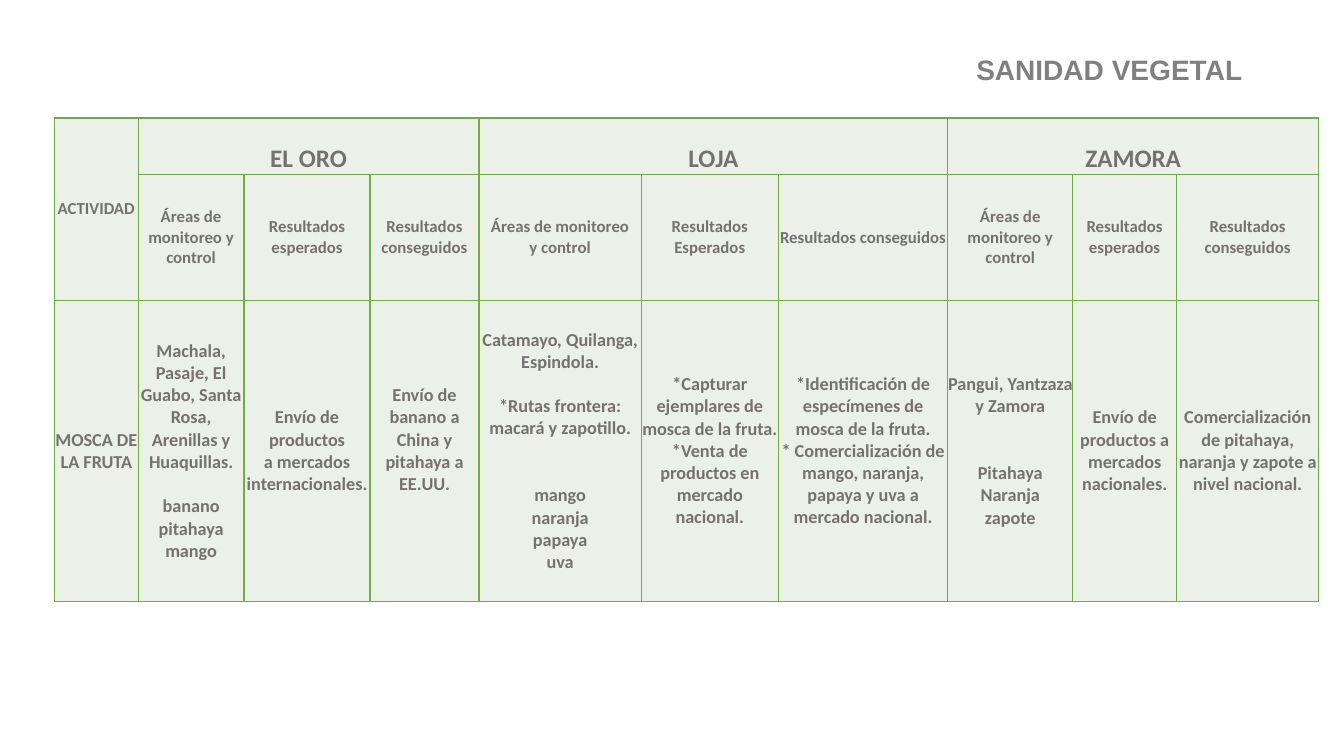
from lxml.etree import SubElement
from pptx import Presentation
from pptx.dml.color import RGBColor
from pptx.enum.text import MSO_ANCHOR, PP_ALIGN
from pptx.oxml.ns import qn
from pptx.util import Pt

PX = 9144  # 100 px to the inch
COLORS = {"title": "808080", "text": "767171", "cell": "EBF1E9", "border": "70AD47"}
LINE = 16  # height in points of one 13 pt line

COLS = [83, 105, 125, 108, 161, 136, 168, 124, 103, 141]
ROWS = [56, 125, 299]
PROVINCES = ["EL ORO", "LOJA", "ZAMORA"]
AREAS, EXPECTED, ACHIEVED = ("Áreas de monitoreo y control", "Resultados esperados",
                             "Resultados conseguidos")
HEADINGS = [AREAS, EXPECTED, ACHIEVED,
            "Áreas de monitoreo\ny control", "Resultados\nEsperados", ACHIEVED,
            AREAS, EXPECTED, ACHIEVED]
# An empty line stands for a gap of one line
FRUIT_FLY = [
    "MOSCA DE LA FRUTA",
    "Machala, Pasaje, El Guabo, Santa Rosa, Arenillas y Huaquillas.\n\n"
    "banano\npitahaya\nmango",
    "Envío de productos\na mercados\ninternacionales.",
    "Envío de banano a China y pitahaya a EE.UU.\n",
    "Catamayo, Quilanga, Espindola.\n\n*Rutas frontera: macará y zapotillo.\n\n\n"
    "mango\nnaranja\npapaya\nuva",
    "*Capturar ejemplares de mosca de la fruta.\n*Venta de productos en mercado nacional.",
    "*Identificación de especímenes de mosca de la fruta.\n"
    "* Comercialización de mango, naranja, papaya y uva a mercado nacional.",
    "Pangui, Yantzaza y Zamora\n\n\nPitahaya\nNaranja\nzapote",
    "Envío de productos a mercados nacionales.",
    "Comercialización de pitahaya, naranja y zapote a nivel nacional.",
]


def px(*values):
    return [v * PX for v in values]


def set_attrs(obj, values):
    for name, value in values.items():
        setattr(obj, name, value)


def add_run(p, text, size, font, color):
    r = p.add_run()
    r.text = text
    set_attrs(r.font, {"size": Pt(size), "name": font, "bold": True})
    r.font.color.rgb = RGBColor.from_string(COLORS[color])


def add_title(s, text):
    tf = s.shapes.add_textbox(*px(92, 40, 1150, 62)).text_frame
    set_attrs(tf, {"word_wrap": True, "vertical_anchor": MSO_ANCHOR.MIDDLE})
    p = tf.paragraphs[0]
    set_attrs(p, {"alignment": PP_ALIGN.RIGHT, "line_spacing": 0.9})
    add_run(p, text, 20, "Arial", "title")


def style_cell(cell):
    tc_pr = cell._tc.get_or_add_tcPr()
    for side in ("lnL", "lnR", "lnT", "lnB"):
        ln = SubElement(tc_pr, qn(f"a:{side}"), w=str(Pt(1)))
        fill = SubElement(ln, qn("a:solidFill"))
        SubElement(fill, qn("a:srgbClr"), val=COLORS["border"])
    cell.fill.solid()
    cell.fill.fore_color.rgb = RGBColor.from_string(COLORS["cell"])
    set_attrs(cell, dict.fromkeys(
        ("margin_left", "margin_right", "margin_top", "margin_bottom"), 0))


def write_cell(cell, text, size, anchor=MSO_ANCHOR.MIDDLE):
    cell.vertical_anchor = anchor
    tf = cell.text_frame
    p, gap = None, 0
    for line in text.split("\n"):
        if not line:
            gap += 1
            continue
        p = tf.add_paragraph() if p else tf.paragraphs[0]
        p.alignment = PP_ALIGN.CENTER
        if gap:
            p.space_before = Pt(gap * LINE)
        add_run(p, line, size, "Calibri", "text")
        gap = 0
    cell.margin_bottom = Pt(gap * LINE)


def add_activity_table(s):
    frame = s.shapes.add_table(len(ROWS), len(COLS), *px(54, 117, sum(COLS), sum(ROWS)))
    table = frame.table
    set_attrs(table, {"first_row": False, "horz_banding": False})
    for col, width in zip(table.columns, px(*COLS)):
        col.width = width
    for row, height in zip(table.rows, px(*ROWS)):
        row.height = height
    for cell in table.iter_cells():
        style_cell(cell)

    # Merged headings
    table.cell(0, 0).merge(table.cell(1, 0))
    write_cell(table.cell(0, 0), "ACTIVIDAD", 12)
    for i, province in enumerate(PROVINCES):
        first = 1 + 3 * i
        table.cell(0, first).merge(table.cell(0, first + 2))
        write_cell(table.cell(0, first), province, 18, MSO_ANCHOR.BOTTOM)

    # Column headings and activity row
    for c, text in enumerate(HEADINGS, 1):
        write_cell(table.cell(1, c), text, 12)
    for c, text in enumerate(FRUIT_FLY):
        write_cell(table.cell(2, c), text, 13)


def main():
    prs = Presentation()
    prs.slide_width, prs.slide_height = px(1333, 750)
    s = prs.slides.add_slide(prs.slide_layouts[6])
    add_title(s, "SANIDAD VEGETAL")
    add_activity_table(s)
    prs.save("out.pptx")


if __name__ == "__main__":
    main()
